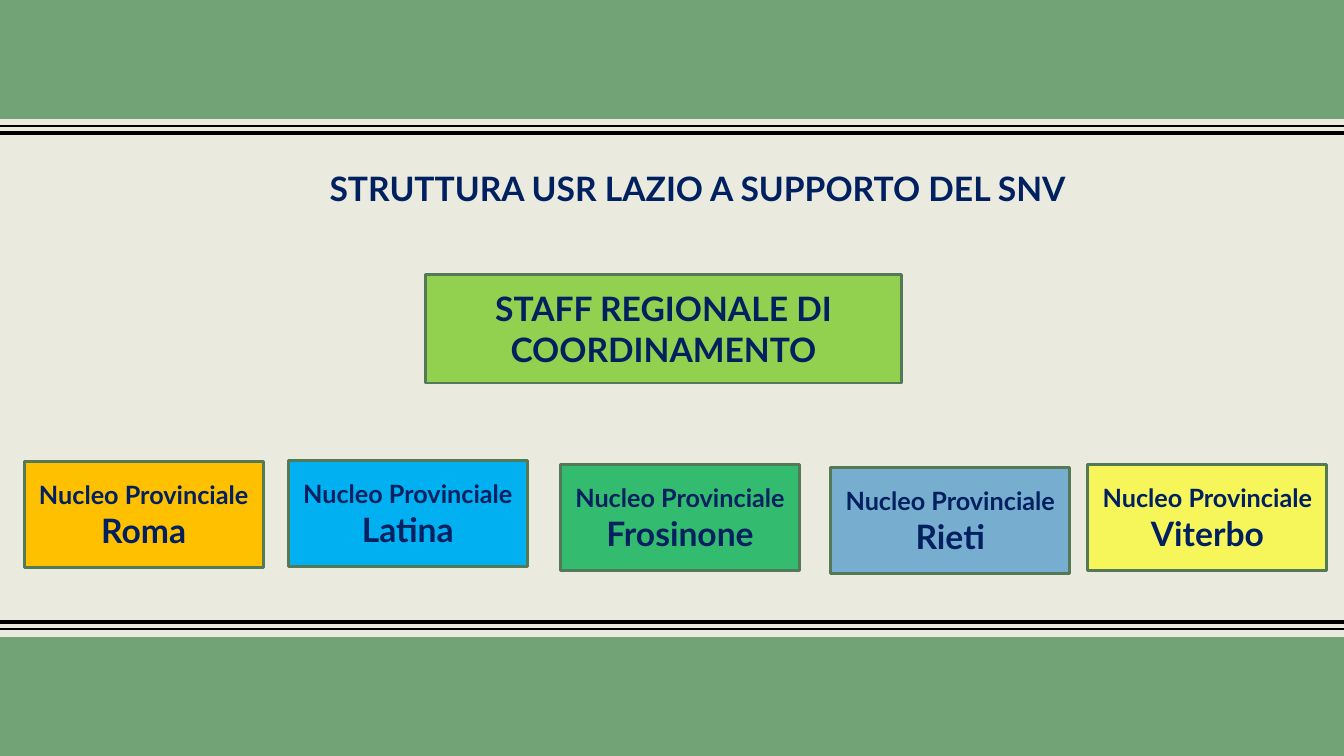
from lxml import etree
from pptx import Presentation
from pptx import util as u
from pptx.dml.color import RGBColor
from pptx.enum import shapes, text
from pptx.oxml.ns import qn

PX = 9144  # EMU in one px, 100 px to the inch
WIDTH, HEIGHT = 1333, 750

THEME = {
    "font": "Lato",
    "background": "EAEBDE", "band": "72A376", "rule": "000000",
    "ink": "002060", "border": "547957", "staff": "92D050",
    "large": 24, "small": 18,
}


def add_box(box, fill, border=None, opacity=100):
    shape = slide.shapes.add_shape(shapes.MSO_SHAPE.RECTANGLE, *[v * PX for v in box])
    shape.shadow.inherit = False
    shape.fill.solid()
    shape.fill.fore_color.rgb = RGBColor.from_string(fill)
    if opacity < 100:
        color = shape.fill._xPr.find(qn("a:solidFill"))[0]
        etree.SubElement(color, qn("a:alpha"), val=str(opacity * 1000))
    if border:
        shape.line.color.rgb = RGBColor.from_string(border)
        shape.line.width = u.Pt(2)
    else:
        shape.line.fill.background()
    return shape


def write(shape, lines, align, anchor):
    frame = shape.text_frame
    frame.word_wrap = True
    frame.vertical_anchor = anchor
    for index, (words, size) in enumerate(lines):
        paragraph = frame.add_paragraph() if index else frame.paragraphs[0]
        paragraph.alignment = align
        run = paragraph.add_run()
        run.text = words
        font_format = {"name": THEME["font"], "size": u.Pt(size), "bold": True}
        for name, value in font_format.items():
            setattr(run.font, name, value)
        run.font.color.rgb = RGBColor.from_string(THEME["ink"])


presentation = Presentation()
presentation.slide_width, presentation.slide_height = WIDTH * PX, HEIGHT * PX
slide = presentation.slides.add_slide(presentation.slide_layouts[6])
slide.background.fill.solid()
slide.background.fill.fore_color.rgb = RGBColor.from_string(THEME["background"])

# Double rules across the slide
for y, weight in [(617, 3), (624, 1), (132, 3), (125, 1)]:
    rule = slide.shapes.add_connector(
        shapes.MSO_CONNECTOR.STRAIGHT, 0, y * PX, WIDTH * PX, y * PX)
    rule.line.color.rgb = RGBColor.from_string(THEME["rule"])
    rule.line.width = u.Pt(weight)
    etree.SubElement(rule._element.spPr, qn("a:effectLst"))

# Green bands at the top and bottom
for top in (0, HEIGHT - 118):
    add_box((0, top, WIDTH, 118), THEME["band"])

# Title
title = slide.shapes.add_textbox(*[v * PX for v in (317, 162, 853, 50)])
write(title, [("STRUTTURA USR LAZIO A SUPPORTO DEL SNV", THEME["large"])],
      text.PP_ALIGN.LEFT, text.MSO_ANCHOR.TOP)

# Regional staff
staff = add_box((422, 272, 472, 108), THEME["staff"], THEME["border"])
write(staff, [("STAFF REGIONALE DI COORDINAMENTO", THEME["large"])],
      text.PP_ALIGN.CENTER, text.MSO_ANCHOR.MIDDLE)

# Provincial units: name, left, top, fill, opacity in percent
units = [
    ("Roma", 24, 458, "FFC000", 100),
    ("Latina", 286, 457, "00B0F0", 100),
    ("Frosinone", 556, 461, "00B050", 78),
    ("Rieti", 824, 464, "0070C0", 49),
    ("Viterbo", 1079, 461, "FFFF00", 59),
]
for province, left, top, fill, opacity in units:
    unit = add_box((left, top, 237, 105), fill, THEME["border"], opacity)
    write(unit, [("Nucleo Provinciale", THEME["small"]), (province, THEME["large"])],
          text.PP_ALIGN.CENTER, text.MSO_ANCHOR.MIDDLE)

presentation.save("out.pptx")
